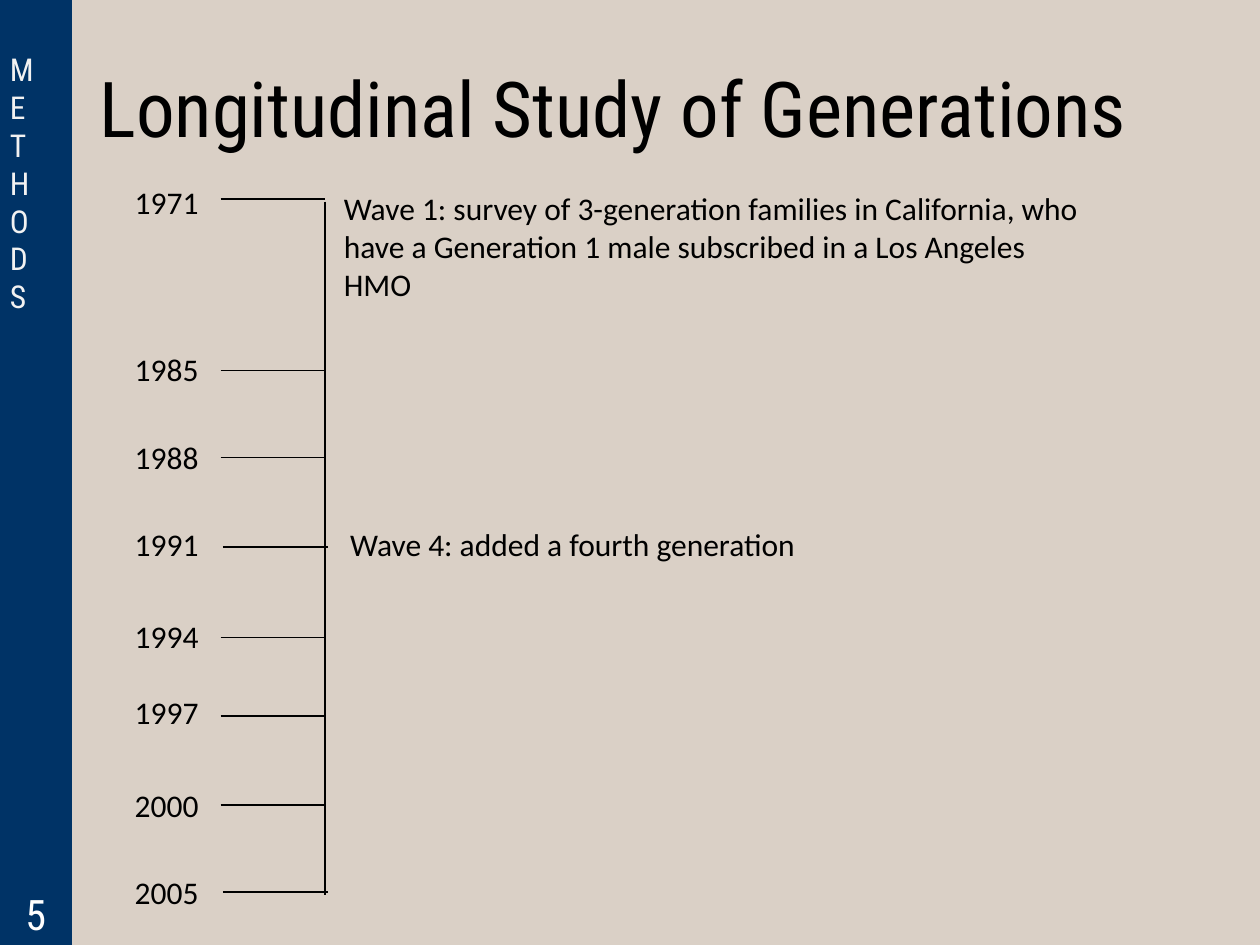
from pptx import Presentation
from pptx.dml.color import RGBColor
from pptx.enum.shapes import MSO_CONNECTOR as Connector, MSO_SHAPE as Shape
from pptx.enum.text import MSO_ANCHOR as Anchor, MSO_AUTO_SIZE as AutoSize, PP_ALIGN as Align
from pptx.oxml.ns import qn
from pptx.util import Pt
from lxml import etree

COLORS = {"background": "DAD0C6", "navy": "003366", "ink": "000000",
          "white": "FFFFFF", "pale": "F2F2F2"}
HEAD_FONT = "Roboto Condensed"
BODY_FONT = "Calibri"

WAVES = [
    ("1971", 113.8, 100.8, 0),
    ("1985", 211.7, 196.6, 0),
    ("1988", 261.4, 247, 0),
    ("1991", 312.5, 296.6, 1.4),
    ("1994", 364.3, 349.2, 0),
    ("1997", 409, 392.4, 0),
    ("2000", 460.1, 445.7, 0),
    ("2005", 509.8, 495.4, 1.4),
]
NOTES = [
    ("Wave 1: survey of 3-generation families in California, who have a "
     "Generation 1 male subscribed in a Los Angeles HMO", 189.4, 104.4, 72.7),
    ("Wave 4: added a fourth generation", 193, 296.6, 29),
]


def color(name):
    return RGBColor.from_string(COLORS[name])


def write(frame, text, font, size, ink, align=Align.LEFT):
    frame.text = text
    para = frame.paragraphs[0]
    para.alignment = align
    span = para.runs[0]
    span.font.name = font
    span.font.size = Pt(size)
    span.font.color.rgb = color(ink)
    return para


def add_text(page, area, text, font=BODY_FONT, size=18, ink="ink", align=Align.LEFT):
    box = page.shapes.add_textbox(*map(Pt, area))
    box.text_frame.word_wrap = True
    write(box.text_frame, text, font, size, ink, align)
    box.text_frame.auto_size = AutoSize.SHAPE_TO_FIT_TEXT
    return box


def add_line(page, start, end, width):
    line = page.shapes.add_connector(Connector.STRAIGHT, *map(Pt, start + end))
    line.line.color.rgb = color("ink")
    line.line.width = Pt(width)
    etree.SubElement(line._element.spPr, qn("a:effectLst"))


def fill_title(page, left, top, width, height):
    title = page.shapes.title
    title.left, title.top, title.width, title.height = map(Pt, (left, top, width, height))
    frame = title.text_frame
    frame.vertical_anchor = Anchor.MIDDLE
    frame.auto_size = AutoSize.NONE
    para = write(frame, "Longitudinal Study of Generations", HEAD_FONT, 44, "ink")
    para.line_spacing = 0.9


def add_sidebar(page, left, top, width, height):
    band = page.shapes.add_shape(Shape.RECTANGLE, *map(Pt, (left, top, width, height)))
    band.shadow.inherit = False
    band.fill.solid()
    band.fill.fore_color.rgb = color("navy")
    band.line.color.rgb = color("navy")
    band.line.width = Pt(1)
    add_text(page, (left, top + height - 36, width, 36), "5",
             HEAD_FONT, 24, "white", Align.CENTER)
    label = add_text(page, (left - 1.4, top + 28.8, width + 2.2, height - 64.8),
                     "METHODS", HEAD_FONT, 18, "pale")
    frame = label.text_frame
    frame.vertical_anchor = Anchor.MIDDLE
    frame.margin_top = frame.margin_bottom = Pt(0)
    frame._txBody.bodyPr.set("vert", "wordArtVert")
    frame.paragraphs[0].runs[0].font._element.set("spc", "-8")


def add_timeline(page, left, top, width, height):
    axis = left + 115.9
    tick_length = 59.8
    add_line(page, (axis, top + 14.4), (axis, top + height), 1.5)
    for year, tick, label_top, shift in WAVES:
        end = axis + shift
        add_line(page, (end - tick_length, tick), (end, tick), 1)
        add_text(page, (left, label_top, 51.8, 29), year)
    for text, note_left, note_top, note_height in NOTES:
        add_text(page, (note_left, note_top, left + width - 77.2, note_height), text)


def main():
    deck = Presentation()
    deck.slide_width, deck.slide_height = Pt(720), Pt(540)
    page = deck.slides.add_slide(deck.slide_layouts[5])
    page.background.fill.solid()
    page.background.fill.fore_color.rgb = color("background")
    fill_title(page, 49.7, 28.8, 620.6, 71.3)
    add_sidebar(page, 0, 0, 41, 540)
    add_timeline(page, 69.9, 100.8, 441.5, 410.4)
    deck.save("out.pptx")


if __name__ == "__main__":
    main()
